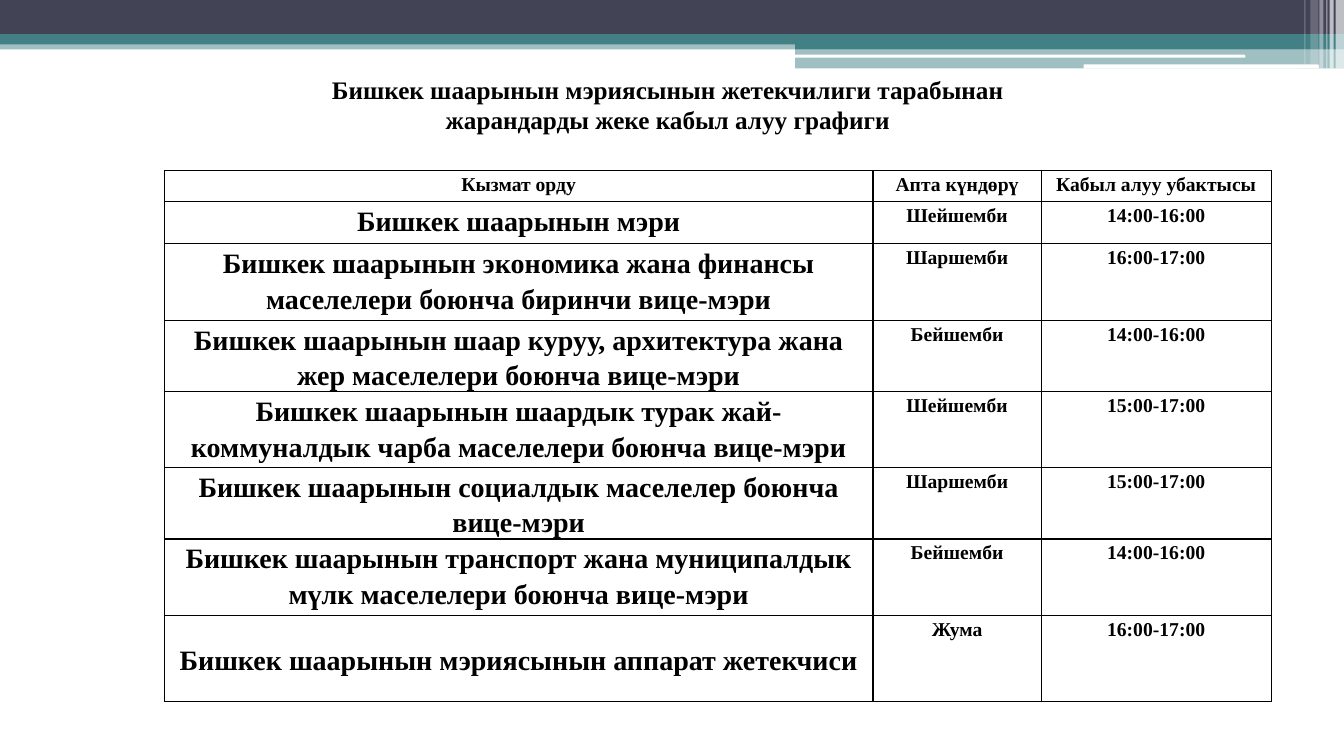
import pptx
import pptx.util
import pptx.dml.color
import pptx.enum.shapes
import pptx.enum.text
import pptx.oxml
import pptx.oxml.ns

Pt = pptx.util.Pt
SHAPE = pptx.enum.shapes.MSO_SHAPE
TEXT = pptx.enum.text
FONT = "Times New Roman"
COLORS = {"dark": "424456", "teal": "438086", "white": "FFFFFF", "black": "000000"}

BANDS = [
    (0, 28.8, 960, 6.5, "teal", 50),
    (0, 0, 960, 24.5, "dark", 100),
    (0, 24.5, 960, 7.2, "teal", 100),
    (568, 28, 392, 7.2, "teal", 100),
    (568, 34.7, 392, 14.2, "teal", 50),
]
PILLS = [(567.5, 39, 322, 2.2), (774, 46.1, 168, 2.9)]
STRIPES = [
    (954, 6, 49, 65),
    (949.7, 2.9, 49, 65),
    (947.5, 0.7, 49, 60),
    (942.5, 2.9, 49, 40),
    (936, 5.8, 46, 20),
    (931.7, 0.7, 46, 30),
]
TITLE = [
    "Бишкек шаарынын мэриясынын жетекчилиги тарабынан",
    "жарандарды жеке кабыл алуу графиги",
]
WIDTHS = [506.2, 120.2, 164.2]
HEIGHTS = [22.3, 30.2, 54.7, 50, 54, 51, 54.7, 61.5]
ROWS = [
    ("Кызмат орду", "Апта күндөрү", "Кабыл алуу убактысы"),
    ("Бишкек шаарынын мэри", "Шейшемби", "14:00-16:00"),
    ("Бишкек шаарынын экономика жана финансы маселелери боюнча биринчи вице-мэри",
     "Шаршемби", "16:00-17:00"),
    ("Бишкек шаарынын шаар куруу, архитектура жана жер маселелери боюнча вице-мэри",
     "Бейшемби", "14:00-16:00"),
    ("Бишкек шаарынын шаардык турак жай-коммуналдык чарба маселелери боюнча вице-мэри",
     "Шейшемби", "15:00-17:00"),
    ("Бишкек шаарынын социалдык маселелер боюнча вице-мэри",
     "Шаршемби", "15:00-17:00"),
    ("Бишкек шаарынын транспорт жана муниципалдык мүлк маселелери боюнча вице-мэри",
     "Бейшемби", "14:00-16:00"),
    ("Бишкек шаарынын мэриясынын аппарат жетекчиси", "Жума", "16:00-17:00"),
]


def node(parent, tag, **attrs):
    child = pptx.oxml.parse_xml(f'<{tag} {pptx.oxml.ns.nsdecls("a")}/>')
    for key, value in attrs.items():
        child.set(key, str(value))
    parent.append(child)
    return child


def add_block(slide, kind, left, top, width, height, color, alpha=100):
    block = slide.shapes.add_shape(kind, Pt(left), Pt(top), Pt(width), Pt(height))
    block.shadow.inherit = False
    block.line.fill.background()
    block.fill.solid()
    block.fill.fore_color.rgb = pptx.dml.color.RGBColor.from_string(COLORS[color])
    if alpha < 100:
        tint = block.fill._xPr.find(".//" + pptx.oxml.ns.qn("a:srgbClr"))
        node(tint, "a:alpha", val=alpha * 1000)


def add_run(par, text, size):
    par.alignment = TEXT.PP_ALIGN.CENTER
    run = par.add_run()
    run.text = text
    run.font.name = FONT
    run.font.size = Pt(size)
    run.font.bold = True
    run.font.color.rgb = pptx.dml.color.RGBColor.from_string(COLORS["black"])


def set_title(slide):
    title = slide.shapes.title
    title.left, title.top, title.width, title.height = Pt(225.5), Pt(49), Pt(503), Pt(51)
    frame = title.text_frame
    frame.word_wrap = False
    frame.auto_size = TEXT.MSO_AUTO_SIZE.NONE
    frame.vertical_anchor = TEXT.MSO_ANCHOR.MIDDLE
    for index, text in enumerate(TITLE):
        par = frame.add_paragraph() if index else frame.paragraphs[0]
        par.line_spacing = 1
        par.space_before = Pt(0)
        add_run(par, text, 18)


def add_edges(cell):
    props = cell._tc.get_or_add_tcPr()
    for side in ("a:lnL", "a:lnR", "a:lnT", "a:lnB"):
        edge = node(props, side, w=Pt(1))
        node(node(edge, "a:solidFill"), "a:srgbClr", val=COLORS["black"])


def set_cell(cell, text, size, anchor):
    cell.margin_left = cell.margin_right = Pt(3.6)
    cell.margin_top = cell.margin_bottom = Pt(0)
    cell.vertical_anchor = anchor
    add_edges(cell)
    cell.fill.background()
    par = cell.text_frame.paragraphs[0]
    par.line_spacing = 1.15
    add_run(par, text, size)


def add_grid(slide):
    frame = slide.shapes.add_table(
        len(ROWS), len(WIDTHS), Pt(117.4), Pt(121.7), Pt(sum(WIDTHS)), Pt(sum(HEIGHTS)))
    table = frame.table
    table.first_row = table.horz_banding = False
    for column, width in zip(table.columns, WIDTHS):
        column.width = Pt(width)
    for row, height in zip(table.rows, HEIGHTS):
        row.height = Pt(height)
    last = len(ROWS) - 1
    for r, row in enumerate(ROWS):
        for c, text in enumerate(row):
            size = 20 if r and not c else 14
            middle = r == last and not c
            anchor = TEXT.MSO_ANCHOR.MIDDLE if middle else TEXT.MSO_ANCHOR.TOP
            set_cell(table.cell(r, c), text, size, anchor)


def main():
    deck = pptx.Presentation()
    deck.slide_width, deck.slide_height = Pt(960), Pt(540)
    slide = deck.slides.add_slide(deck.slide_layouts[5])
    for band in BANDS:
        add_block(slide, SHAPE.RECTANGLE, *band)
    for pill in PILLS:
        add_block(slide, SHAPE.ROUNDED_RECTANGLE, *pill, "white")
    for left, width, height, alpha in STRIPES:
        add_block(slide, SHAPE.RECTANGLE, left, 0, width, height, "white", alpha)
    add_grid(slide)
    set_title(slide)
    deck.save("out.pptx")


if __name__ == "__main__":
    main()
